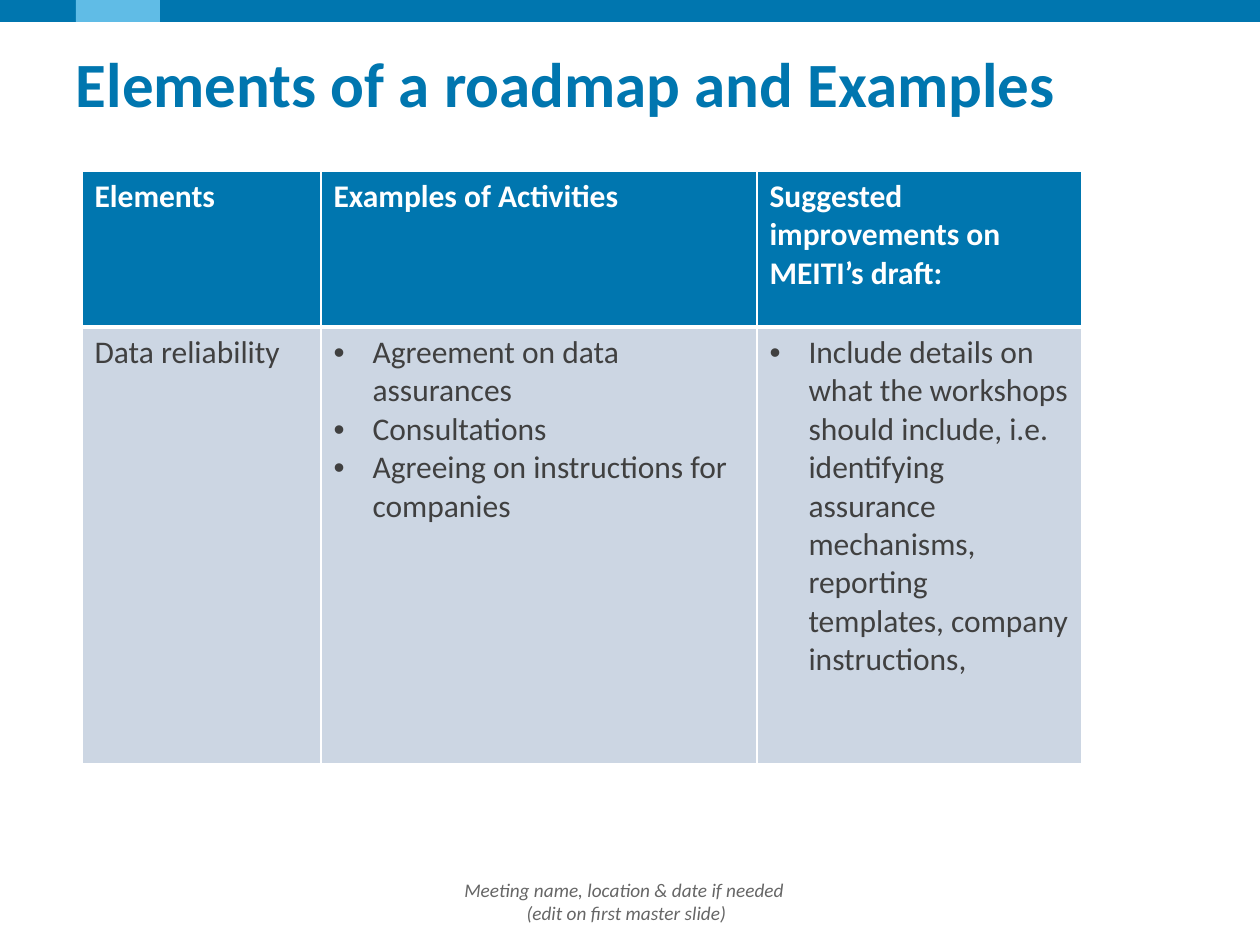
from pptx import Presentation
from pptx.dml.color import RGBColor
from pptx.enum.shapes import MSO_SHAPE as Shape
from pptx.enum.text import MSO_ANCHOR as Anchor, PP_ALIGN as Align
from pptx.oxml import parse_xml
from pptx.oxml.ns import nsdecls
from pptx.util import Emu, Pt

BLUE, LIGHT_BLUE, PALE = "0076AF", "60BCE6", "CCD6E3"
WHITE, DARK, GREY = "FFFFFF", "404040", "666666"


def px(n):
    return Emu(round(n * 914400 / 126))


def rgb(color):
    return RGBColor.from_string(color)


class Deck:
    font = "Calibri"
    indent = 39

    def __init__(self, prs):
        self.prs = prs
        self.slide = prs.slides.add_slide(prs.slide_layouts[6])

    def bar(self, x, y, w, h, color):
        s = self.slide.shapes.add_shape(Shape.RECTANGLE, px(x), px(y), px(w), px(h))
        s.shadow.inherit = False
        s.fill.solid()
        s.fill.fore_color.rgb = rgb(color)
        s.line.fill.background()

    def style(self, p, size, color, bold=False, italic=False):
        for r in p.runs:
            f = r.font
            f.name, f.size, f.bold, f.italic = self.font, Pt(size), bold, italic
            f.color.rgb = rgb(color)

    def text(self, x, y, w, h, text, size, color, align=Align.LEFT,
             anchor=Anchor.TOP, **look):
        tf = self.slide.shapes.add_textbox(px(x), px(y), px(w), px(h)).text_frame
        tf.word_wrap = True
        tf.margin_left = tf.margin_right = 0
        tf.vertical_anchor = anchor
        tf.text = text
        p = tf.paragraphs[0]
        p.alignment = align
        self.style(p, size, color, **look)

    def bullet(self, p):
        pPr = p._p.get_or_add_pPr()
        pPr.set("marL", str(px(self.indent)))
        pPr.set("indent", str(-px(self.indent)))
        pPr.append(parse_xml(f'<a:buFont {nsdecls("a")} typeface="Arial"/>'))
        pPr.append(parse_xml(f'<a:buChar {nsdecls("a")} char="•"/>'))

    def borders(self, cell, top, bottom):
        tcPr = cell._tc.get_or_add_tcPr()
        for side, width in zip("LRTB", (1, 1, top, bottom)):
            tcPr.append(parse_xml(
                f'<a:ln{side} {nsdecls("a")} w="{Pt(width)}"><a:solidFill>'
                f'<a:srgbClr val="{WHITE}"/></a:solidFill></a:ln{side}>'))

    def table(self, x, y, widths, heights, rows):
        table = self.slide.shapes.add_table(
            len(rows), len(widths), px(x), px(y),
            px(sum(widths)), px(sum(heights))).table
        for col, w in zip(table.columns, widths):
            col.width = px(w)
        for i, (row, h) in enumerate(zip(rows, heights)):
            table.rows[i].height = px(h)
            header = i == 0
            for j, content in enumerate(row):
                cell = table.cell(i, j)
                self.borders(cell, 1 if header else 3, 3 if header else 1)
                cell.fill.solid()
                cell.fill.fore_color.rgb = rgb(BLUE if header else PALE)
                bulleted = isinstance(content, list)
                cell.text_frame.text = "\n".join(content) if bulleted else content
                for p in cell.text_frame.paragraphs:
                    if bulleted:
                        self.bullet(p)
                    self.style(p, 18, WHITE if header else DARK, bold=header)


def main():
    prs = Presentation()
    prs.slide_width, prs.slide_height = px(1260), px(945)
    deck = Deck(prs)

    # Top band
    deck.bar(0, -1, 1260, 23, BLUE)
    deck.bar(76, -1, 84, 23, LIGHT_BLUE)

    # Title and footer
    deck.text(76, 38, 1085, 91, "Elements of a roadmap and Examples", 36, BLUE,
              bold=True)
    deck.text(306, 876, 641, 50,
              "Meeting name, location & date if needed \v(edit on first master slide)",
              11, GREY, Align.CENTER, Anchor.MIDDLE, italic=True)

    # Roadmap table
    deck.table(82, 171, (239, 436, 325), (156, 437), [
        ["Elements", "Examples of Activities",
         "Suggested improvements on MEITI’s draft:"],
        ["Data reliability",
         ["Agreement on data assurances", "Consultations",
          "Agreeing on instructions for companies"],
         ["Include details on what the workshops should include, i.e. "
          "identifying assurance mechanisms, reporting templates, "
          "company instructions,"]],
    ])

    prs.save("out.pptx")


if __name__ == "__main__":
    main()
